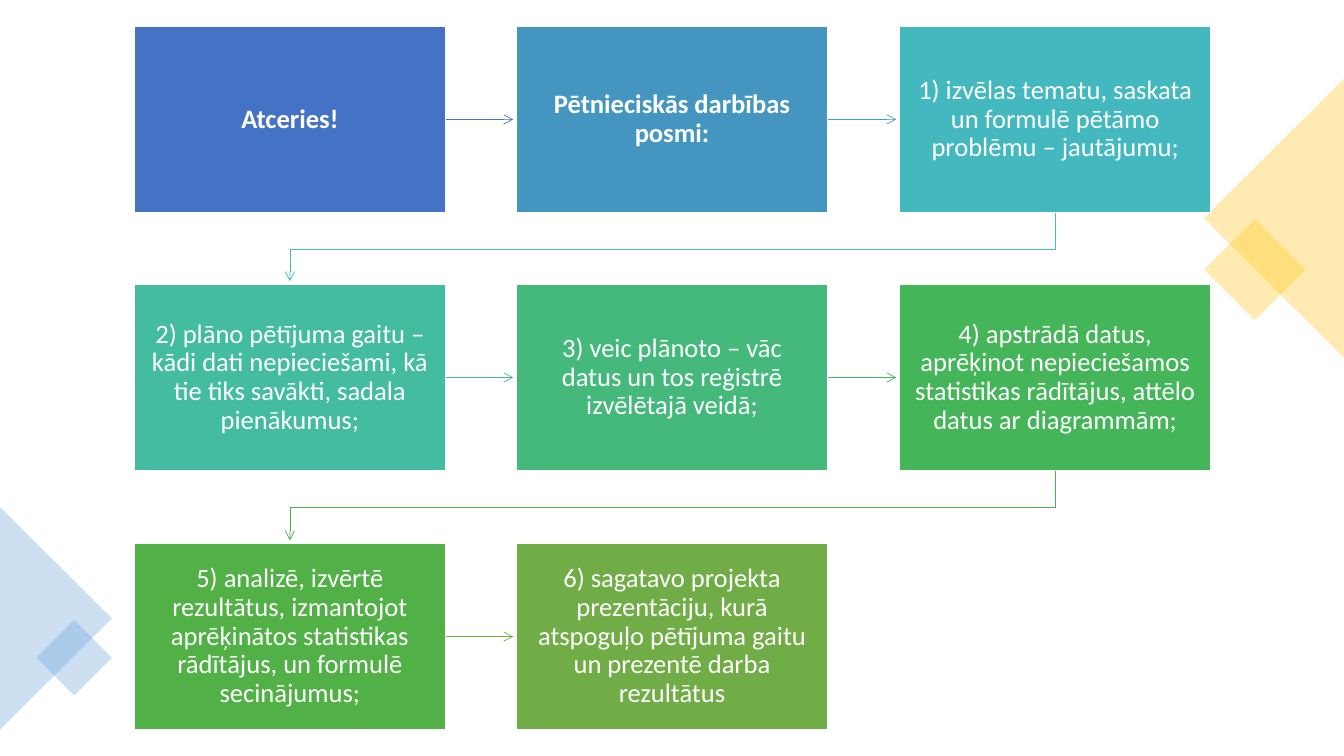
from itertools import pairwise

from lxml.etree import SubElement
from pptx import Presentation
from pptx.dml.color import RGBColor
from pptx.enum.shapes import MSO_CONNECTOR as Link, MSO_SHAPE as Kind
from pptx.enum.text import MSO_ANCHOR as Anchor, PP_ALIGN as Align
from pptx.oxml.ns import qn
from pptx.util import Pt

PX = 9144
COLUMNS = 3
STEP_WIDTH, STEP_HEIGHT = 309, 185
ARROW_GAP = 3
TURN_DROP = 36

COLORS = {"white": "FFFFFF", "yellow": "FFC000", "blue": "5B9BD5"}

STEPS = [
    ("Atceries!", "4472C4", True),
    ("Pētnieciskās darbības posmi:", "4496C1", True),
    ("1) izvēlas tematu, saskata un formulē pētāmo problēmu – jautājumu;", "43B8BF", False),
    ("2) plāno pētījuma gaitu – kādi dati nepieciešami, kā tie tiks savākti, sadala pienākumus;",
     "43BCA0", False),
    ("3) veic plānoto – vāc datus un tos reģistrē izvēlētajā veidā;", "44B97B", False),
    ("4) apstrādā datus, aprēķinot nepieciešamos statistikas rādītājus, "
     "attēlo datus ar diagrammām;", "45B559", False),
    ("5) analizē, izvērtē rezultātus, izmantojot aprēķinātos statistikas rādītājus, "
     "un formulē secinājumus;", "52B146", False),
    ("6) sagatavo projekta prezentāciju, kurā atspoguļo pētījuma gaitu "
     "un prezentē darba rezultātus", "70AD47", False),
]
ARROW_COLORS = ["4472C4", "449BC1", "43BEB9", "43BB8D", "45B664", "4CB146", "70AD47"]

DECORATIONS = [
    (Kind.RECTANGLE, (1209, 232, 71, 71), 45, "yellow"),
    (Kind.ISOSCELES_TRIANGLE, (1125, 147, 277, 139), 270, "yellow"),
    (Kind.ISOSCELES_TRIANGLE, (-55, 558, 221, 111), 90, "blue"),
    (Kind.RECTANGLE, (47, 626, 53, 53), 45, "blue"),
]


def set_all(target, values):
    for name, value in values.items():
        setattr(target, name, value)


def add_filled(page, kind, box, color):
    shape = page.shapes.add_shape(kind, *(length * PX for length in box))
    shape.shadow.inherit = False
    shape.fill.solid()
    shape.fill.fore_color.rgb = RGBColor.from_string(color)
    return shape


def add_decoration(page, kind, box, rotation, color):
    shape = add_filled(page, kind, box, COLORS[color])
    shape.rotation = rotation
    shape.line.fill.background()
    tint = shape.element.spPr.find(qn("a:solidFill")).find(qn("a:srgbClr"))
    SubElement(tint, qn("a:alpha"), val="30000")


def add_step(page, box, text, color, bold):
    shape = add_filled(page, Kind.RECTANGLE, box, color)
    white = RGBColor.from_string(COLORS["white"])
    shape.line.color.rgb = white
    shape.line.width = Pt(1)
    frame = shape.text_frame
    set_all(frame, {
        "word_wrap": True, "vertical_anchor": Anchor.MIDDLE,
        "margin_left": 15 * PX, "margin_right": 15 * PX,
        "margin_top": 16 * PX, "margin_bottom": 16 * PX,
    })
    para = frame.paragraphs[0]
    set_all(para, {"alignment": Align.CENTER, "line_spacing": 0.9})
    span = para.add_run()
    span.text = text
    set_all(span.font, {"name": "Calibri", "size": Pt(19), "bold": bold})
    span.font.color.rgb = white
    return shape


def style_arrow(arrow, color):
    arrow.line.color.rgb = RGBColor.from_string(color)
    arrow.line.width = Pt(0.5)
    properties = arrow.element.spPr
    SubElement(properties.find(qn("a:ln")), qn("a:tailEnd"), type="arrow")
    SubElement(properties, qn("a:effectLst"))


def add_straight_arrow(page, start, end, color):
    middle = start.top + start.height // 2
    arrow = page.shapes.add_connector(
        Link.STRAIGHT, start.left + start.width, middle, end.left - ARROW_GAP * PX, middle)
    arrow.begin_connect(start, 3)
    style_arrow(arrow, color)


def add_turning_arrow(page, start, end, color):
    right, left = (step.left + step.width // 2 for step in (start, end))
    top = start.top + start.height
    turn = top + TURN_DROP * PX
    builder = page.shapes.build_freeform(right, top)
    builder.add_line_segments(
        [(right, turn), (left, turn), (left, end.top - ARROW_GAP * PX)], close=False)
    arrow = builder.convert_to_shape()
    arrow.fill.background()
    style_arrow(arrow, color)


def add_process(page, left, top):
    steps = []
    for index, (text, color, bold) in enumerate(STEPS):
        row, column = divmod(index, COLUMNS)
        box = (left + column * 759 // 2, top + row * 513 // 2, STEP_WIDTH, STEP_HEIGHT)
        steps.append(add_step(page, box, text, color, bold))
    for (start, end), color in zip(pairwise(steps), ARROW_COLORS):
        add_arrow = add_straight_arrow if start.top == end.top else add_turning_arrow
        add_arrow(page, start, end, color)


def main():
    deck = Presentation()
    set_all(deck, {"slide_width": 1333 * PX, "slide_height": 750 * PX})
    page = deck.slides.add_slide(deck.slide_layouts[6])
    for decoration in DECORATIONS:
        add_decoration(page, *decoration)
    add_process(page, 133, 26)
    deck.save("out.pptx")


if __name__ == "__main__":
    main()
